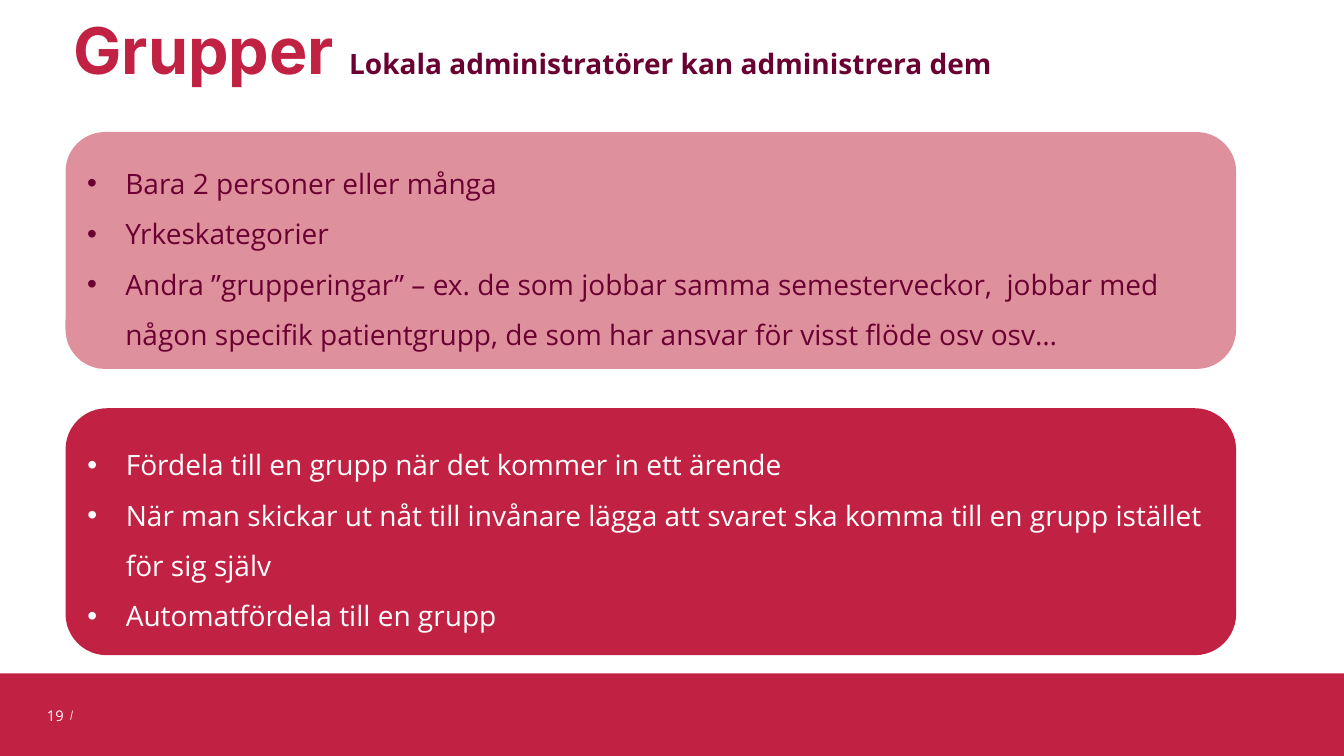
from lxml import etree
from pptx import Presentation
from pptx.dml.color import RGBColor
from pptx.enum import shapes, text
from pptx.oxml import ns
from pptx.util import Inches, Pt

CRIMSON = RGBColor(0xC1, 0x21, 0x43)
ROSE = RGBColor(0xDE, 0x90, 0x9D)
PLUM = RGBColor(0x6A, 0x00, 0x32)
WHITE = RGBColor(0xFF, 0xFF, 0xFF)

GROUP_EXAMPLES = [
    "Bara 2 personer eller många",
    "Yrkeskategorier",
    "Andra ”grupperingar” – ex. de som jobbar samma semesterveckor,  jobbar med "
    "någon specifik patientgrupp, de som har ansvar för visst flöde osv osv…",
]
GROUP_USES = [
    "Fördela till en grupp när det kommer in ett ärende",
    "När man skickar ut nåt till invånare lägga att svaret ska komma till en "
    "grupp istället för sig själv",
    "Automatfördela till en grupp",
]


class SlideBuilder:
    heading_font = "Inter"
    body_font = "Open Sans"
    body_size = 20
    indent = Inches(0.38)

    def __init__(self, deck):
        self.page = deck.slides.add_slide(deck.slide_layouts[5])

    def set_font(self, font, name, size, color, bold=False):
        font.name = name
        font.size = Pt(size)
        font.bold = bold
        font.color.rgb = color

    def title(self, heading, subheading, left, top, width, height):
        box = self.page.shapes.title
        box.left, box.top = Inches(left), Inches(top)
        box.width, box.height = Inches(width), Inches(height)
        frame = box.text_frame
        frame.margin_left = frame.margin_right = 0
        frame.margin_top = frame.margin_bottom = 0
        frame.vertical_anchor = text.MSO_ANCHOR.MIDDLE
        frame.auto_size = text.MSO_AUTO_SIZE.NONE
        para = frame.paragraphs[0]
        para.alignment = text.PP_ALIGN.LEFT
        para.line_spacing = 0.9
        for words, name, size, color in (
            (heading, self.heading_font, 46, CRIMSON),
            (subheading, self.body_font, self.body_size, PLUM),
        ):
            span = para.add_run()
            span.text = words
            self.set_font(span.font, name, size, color, bold=True)

    def block(self, kind, left, top, width, height, fill):
        box = self.page.shapes.add_shape(
            kind, Inches(left), Inches(top), Inches(width), Inches(height))
        box.shadow.inherit = False
        box.fill.solid()
        box.fill.fore_color.rgb = fill
        box.line.fill.background()
        return box

    def bullet_card(self, items, top, height, fill, color):
        box = self.block(shapes.MSO_SHAPE.ROUNDED_RECTANGLE,
                         0.65, top, 11.61, height, fill)
        frame = box.text_frame
        frame.word_wrap = True
        frame.vertical_anchor = text.MSO_ANCHOR.MIDDLE
        for index, item in enumerate(items):
            para = frame.add_paragraph() if index else frame.paragraphs[0]
            para.text = item
            para.alignment = text.PP_ALIGN.LEFT
            para.line_spacing = 1.5
            self.bullet(para)
            self.set_font(para.font, self.body_font, self.body_size, color)

    def bullet(self, para):
        """Give the paragraph a hanging indent and a round bullet."""
        props = para._p.get_or_add_pPr()
        props.set("marL", str(self.indent))
        props.set("indent", str(-self.indent))
        etree.SubElement(props, ns.qn("a:buFont")).set("typeface", "Arial")
        etree.SubElement(props, ns.qn("a:buChar")).set("char", "•")

    def line(self, start, end, color, width):
        connector = self.page.shapes.add_connector(
            shapes.MSO_CONNECTOR.STRAIGHT, *map(Inches, start + end))
        connector.line.color.rgb = color
        connector.line.width = Pt(width)
        etree.SubElement(connector._element.spPr, ns.qn("a:effectLst"))

    def page_number(self, number, left, top, width, height):
        box = self.page.shapes.add_textbox(
            Inches(left), Inches(top), Inches(width), Inches(height))
        frame = box.text_frame
        frame.word_wrap = True
        frame.vertical_anchor = text.MSO_ANCHOR.MIDDLE
        para = frame.paragraphs[0]
        para.text = str(number)
        para.alignment = text.PP_ALIGN.RIGHT
        self.set_font(para.font, self.body_font, 10.5, WHITE)


def main():
    deck = Presentation()
    deck.slide_width = Inches(13.33)
    deck.slide_height = Inches(7.5)

    slide = SlideBuilder(deck)
    slide.block(shapes.MSO_SHAPE.RECTANGLE, 0, 6.68, 13.33, 0.82, CRIMSON)
    slide.line((0.72, 7.05), (0.7, 7.14), WHITE, 0.5)
    slide.title("Grupper ", "Lokala administratörer kan administrera dem",
                0.73, 0.14, 11.26, 0.78)
    slide.page_number(19, 0.3, 6.9, 0.43, 0.4)
    slide.bullet_card(GROUP_EXAMPLES, 1.31, 2.35, ROSE, PLUM)
    slide.bullet_card(GROUP_USES, 4.05, 2.45, CRIMSON, WHITE)

    deck.save("out.pptx")


if __name__ == "__main__":
    main()
